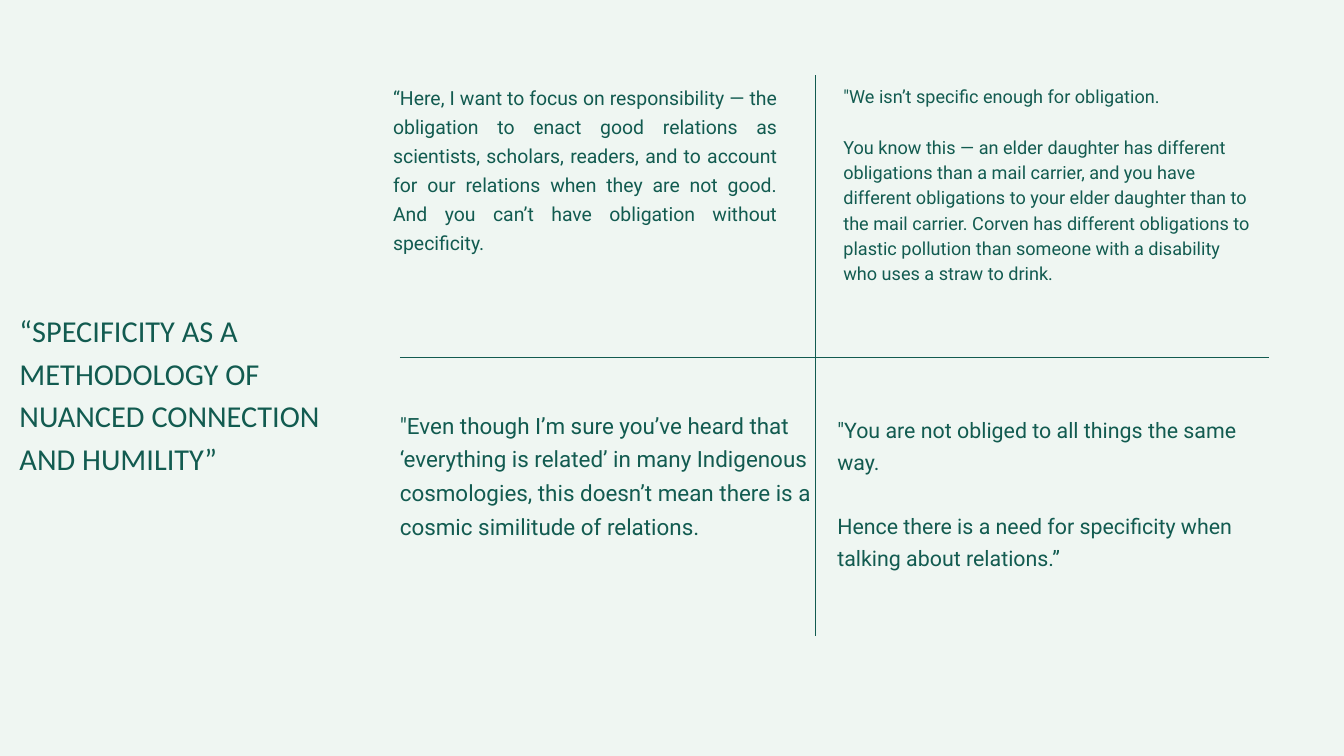
from pptx import Presentation
from pptx.dml.color import RGBColor
from pptx.enum.shapes import MSO_CONNECTOR
from pptx.enum.text import MSO_ANCHOR, MSO_AUTO_SIZE, PP_ALIGN
from pptx.oxml.ns import qn
from pptx.util import Inches, Pt
from lxml import etree

LEFT, JUSTIFY = PP_ALIGN.LEFT, PP_ALIGN.JUSTIFY
COLORS = {"background": "EFF6F2", "ink": "125B50"}
TITLE_ONLY = 5

HEADING = {
    "paragraphs": ["“SPECIFICITY AS A METHODOLOGY OF NUANCED CONNECTION AND HUMILITY”"],
    "area": (0.29, 4.56, 5.14, 3.21), "size": 32.5, "leading": 45.5, "font": "Calibri",
}
QUOTES = [
    {"paragraphs": [
        "“Here, I want to focus on responsibility — the obligation to enact good relations "
        "as scientists, scholars, readers, and to account for our relations when they are "
        "not good. And you can’t have obligation without specificity."],
     "area": (5.85, 1.19, 5.71, 3.47), "size": 20.8, "leading": 31.2, "align": JUSTIFY},
    {"paragraphs": [
        "\"We isn’t specific enough for obligation.",
        "You know this — an elder daughter has different obligations than a mail carrier, "
        "and you have different obligations to your elder daughter than to the mail carrier. "
        "Corven has different obligations to plastic pollution than someone with a "
        "disability who uses a straw to drink."],
     "area": (12.55, 1.22, 6.18, 3.75), "size": 19.4, "leading": 27.1},
    {"paragraphs": [
        "\"Even though I’m sure you’ve heard that ‘everything is related’ in many Indigenous "
        "cosmologies, this doesn’t mean there is a cosmic similitude of relations."],
     "area": (5.95, 6.03, 6.13, 3.57), "size": 24, "leading": 36},
    {"paragraphs": [
        "\"You are not obliged to all things the same way.",
        "Hence there is a need for specificity when talking about relations.”"],
     "area": (12.46, 6.11, 6.42, 3.33), "size": 22.9, "leading": 34.4},
]
DIVIDERS = [(5.95, 5.32, 18.88, 5.32), (12.13, 1.12, 12.13, 9.46)]


def color(name):
    return RGBColor.from_string(COLORS[name])


def fill_text(frame, block):
    """Set the block's paragraphs, one blank line's height apart."""
    frame.word_wrap = True
    frame.auto_size = MSO_AUTO_SIZE.NONE
    frame.vertical_anchor = MSO_ANCHOR.TOP
    frame.margin_left = frame.margin_right = frame.margin_top = frame.margin_bottom = 0
    frame.text = "\n".join(block["paragraphs"])
    for index, paragraph in enumerate(frame.paragraphs):
        paragraph.alignment = block.get("align", LEFT)
        paragraph.line_spacing = Pt(block["leading"])
        if index:
            paragraph.space_before = Pt(block["leading"])
        for run in paragraph.runs:
            run.font.name = block.get("font", "Roboto")
            run.font.size = Pt(block["size"])
            run.font.color.rgb = color("ink")


def add_divider(slide, ends):
    divider = slide.shapes.add_connector(MSO_CONNECTOR.STRAIGHT, *map(Inches, ends))
    divider.line.color.rgb = color("ink")
    divider.line.width = Pt(0.75)
    etree.SubElement(divider._element.spPr, qn("a:effectLst"))


def main():
    deck = Presentation()
    deck.slide_width, deck.slide_height = Inches(20), Inches(11.25)
    slide = deck.slides.add_slide(deck.slide_layouts[TITLE_ONLY])
    slide.background.fill.solid()
    slide.background.fill.fore_color.rgb = color("background")

    title = slide.shapes.title
    title.left, title.top, title.width, title.height = map(Inches, HEADING["area"])
    fill_text(title.text_frame, HEADING)

    for quote in QUOTES:
        fill_text(slide.shapes.add_textbox(*map(Inches, quote["area"])).text_frame, quote)
    for ends in DIVIDERS:
        add_divider(slide, ends)

    deck.save("out.pptx")


if __name__ == "__main__":
    main()
